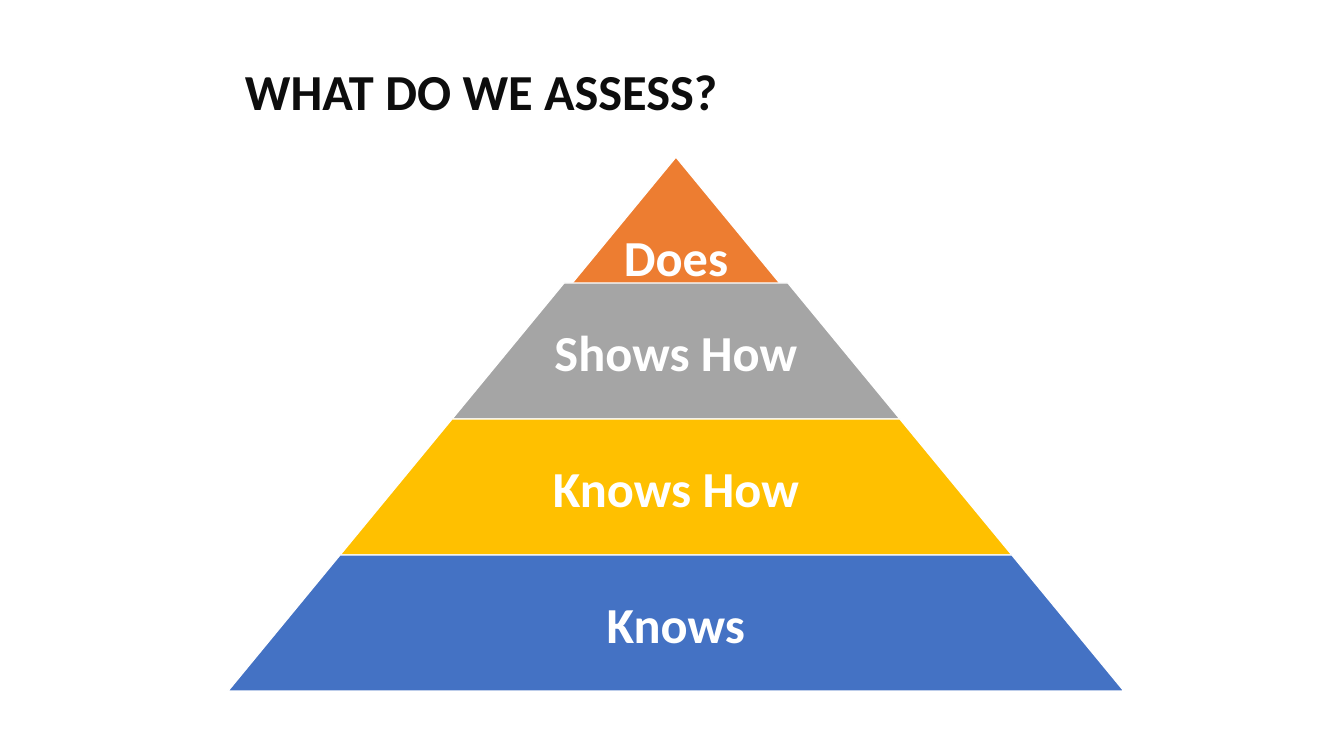
from dataclasses import dataclass

from pptx import Presentation
from pptx import util as u
from pptx.dml.color import RGBColor
from pptx.enum import shapes, text

PX = 914400 / 100.8


@dataclass(frozen=True)
class Theme:
    font: str = "Calibri"
    size: int = 36
    ink: str = "0D0D0D"
    white: str = "FFFFFF"
    does: str = "ED7D31"
    shows_how: str = "A5A5A5"
    knows_how: str = "FFC000"
    knows: str = "4472C4"


THEME = Theme()

# Pyramid geometry in px
CENTER, APEX, TIER_H, TIER_STEP = 676, 157, 136, 224
OVERLAP = 10  # the tip reaches under the tier below it
TIP_LABEL_DROP = 31  # half a text line, towards the wide end of the tip
LABEL_SHARE = 0.65


def px(*lengths):
    return [u.Emu(round(length * PX)) for length in lengths]


def rgb(color):
    return RGBColor.from_string(color)


def add_text(slide, box, words, color, align, inset=None):
    frame = slide.shapes.add_textbox(*px(*box)).text_frame
    settings = {"word_wrap": True, "vertical_anchor": text.MSO_ANCHOR.MIDDLE}
    if inset is not None:
        margin = px(inset)[0]
        for side in ("left", "top", "right", "bottom"):
            settings[f"margin_{side}"] = margin
    for name, value in settings.items():
        setattr(frame, name, value)

    line = frame.paragraphs[0]
    line.alignment = align
    run = line.add_run()
    run.text = words
    style = {"name": THEME.font, "size": u.Pt(THEME.size), "bold": True}
    for name, value in style.items():
        setattr(run.font, name, value)
    run.font.color.rgb = rgb(color)


def add_tier(slide, top, width, color):
    tier = slide.shapes.add_shape(
        shapes.MSO_SHAPE.TRAPEZOID, *px(CENTER - width / 2, top, width, TIER_H))
    tier.adjustments[0] = TIER_STEP / 2 / TIER_H
    tier.shadow.inherit = False
    tier.fill.solid()
    tier.fill.fore_color.rgb = rgb(color)
    tier.line.color.rgb = rgb(THEME.white)
    tier.line.width = u.Pt(1)


def add_pyramid(slide, tiers):
    for level, (words, color) in enumerate(tiers):
        is_tip = level == 0
        top = APEX + level * TIER_H - (0 if is_tip else OVERLAP)
        width = TIER_STEP * (level + 1)
        add_tier(slide, top, width, color)

        label_w = width * LABEL_SHARE
        label_top = top + (TIP_LABEL_DROP if is_tip else 0)
        add_text(slide, (CENTER - label_w / 2, label_top, label_w, TIER_H),
                 words, THEME.white, text.PP_ALIGN.CENTER, inset=5)


def main():
    deck = Presentation()
    deck.slide_width, deck.slide_height = px(1344, 756)
    slide = deck.slides.add_slide(deck.slide_layouts[6])

    # Pyramid, from tip to base
    add_pyramid(slide, [
        ("Does", THEME.does),
        ("Shows How", THEME.shows_how),
        ("Knows How", THEME.knows_how),
        ("Knows", THEME.knows),
    ])

    # Title
    add_text(slide, (235, 27, 857, 126), "WHAT DO WE ASSESS?",
             THEME.ink, text.PP_ALIGN.LEFT)

    deck.save("out.pptx")


if __name__ == "__main__":
    main()
